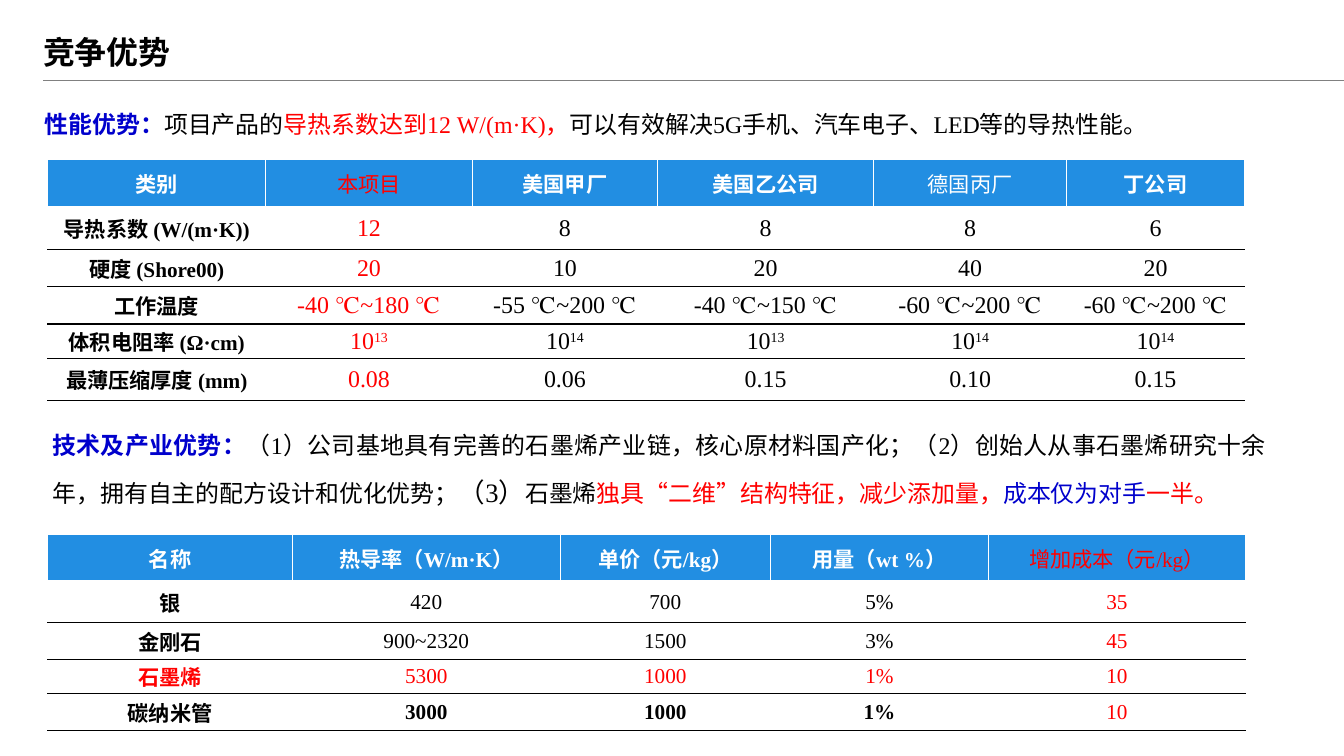
from lxml import etree
from pptx import Presentation
from pptx.dml.color import RGBColor
from pptx.enum.lang import MSO_LANGUAGE_ID
from pptx.enum.shapes import MSO_CONNECTOR
from pptx.enum.text import MSO_ANCHOR, MSO_AUTO_SIZE, PP_ALIGN
from pptx.oxml.ns import qn
from pptx.util import Pt

BLACK = RGBColor(0x00, 0x00, 0x00)
WHITE = RGBColor(0xFF, 0xFF, 0xFF)
RED = RGBColor(0xFF, 0x00, 0x00)
NAVY = RGBColor(0x00, 0x00, 0xCC)
BLUE = RGBColor(0x22, 0x8E, 0xE2)
GRAY = RGBColor(0x80, 0x80, 0x80)

CENTER, LEFT, JUSTIFY = PP_ALIGN.CENTER, PP_ALIGN.LEFT, PP_ALIGN.JUSTIFY
MIDDLE, TOP = MSO_ANCHOR.MIDDLE, MSO_ANCHOR.TOP
NO_FIT = MSO_AUTO_SIZE.NONE
STRAIGHT = MSO_CONNECTOR.STRAIGHT
CHINESE = MSO_LANGUAGE_ID.SIMPLIFIED_CHINESE

SERIF = "Times New Roman"
SANS = "Noto Sans CJK SC"
TITLE_ONLY = 5


def add_text(p, text, size=18, color=BLACK, bold=False, font=SERIF, raised=False):
    r = p.add_run()
    r.text = text
    f = r.font
    f.size, f.bold, f.name = Pt(size), bold, font
    f.color.rgb = color
    f.language_id = CHINESE
    rPr = r._r.get_or_add_rPr()
    etree.SubElement(rPr, qn("a:ea")).set("typeface", SANS)
    if raised:
        rPr.set("baseline", "30000")


class Deck:
    def __init__(self, width, height):
        self.prs = Presentation()
        self.prs.slide_width, self.prs.slide_height = Pt(width), Pt(height)
        self.s = self.prs.slides.add_slide(self.prs.slide_layouts[TITLE_ONLY])

    def title(self, text, x, y, w, h):
        sp = self.s.shapes.title
        sp.left, sp.top, sp.width, sp.height = Pt(x), Pt(y), Pt(w), Pt(h)
        tf = sp.text_frame
        tf.auto_size, tf.word_wrap, tf.vertical_anchor = NO_FIT, False, TOP
        p = tf.paragraphs[0]
        p.alignment = LEFT
        add_text(p, text, size=24, bold=True, font=SANS)

    def paragraph(self, runs, x, y, w, h, spacing):
        tf = self.s.shapes.add_textbox(Pt(x), Pt(y), Pt(w), Pt(h)).text_frame
        tf.word_wrap = True
        p = tf.paragraphs[0]
        p.alignment, p.line_spacing = JUSTIFY, spacing
        for text, fmt in runs:
            add_text(p, text, **fmt)

    def rule(self, x1, x2, y):
        ln = self.s.shapes.add_connector(STRAIGHT, Pt(x1), Pt(y), Pt(x2), Pt(y))
        ln.line.color.rgb, ln.line.width = GRAY, Pt(0.5)
        etree.SubElement(ln._element.spPr, qn("a:effectLst"))

    def borders(self, cell, row):
        top = WHITE if row < 2 else BLACK
        bottom = (WHITE, 3) if row == 0 else (BLACK, 1)
        edges = [("L", WHITE, 1), ("R", WHITE, 1), ("T", top, 1), ("B", *bottom)]
        tcPr = cell._tc.get_or_add_tcPr()
        for i, (side, color, width) in enumerate(edges):
            ln = etree.Element(qn(f"a:ln{side}"), w=str(Pt(width)))
            fill = etree.SubElement(ln, qn("a:solidFill"))
            etree.SubElement(fill, qn("a:srgbClr")).set("val", str(color))
            tcPr.insert(i, ln)

    def table(self, rows, x, y, widths, heights, style):
        frame = self.s.shapes.add_table(
            len(rows), len(widths), Pt(x), Pt(y), Pt(sum(widths)), Pt(sum(heights)))
        tbl = frame.table
        tbl.first_row = tbl.horz_banding = False
        for col, w in zip(tbl.columns, widths):
            col.width = Pt(w)
        for row, h in zip(tbl.rows, heights):
            row.height = Pt(h)
        for i, row in enumerate(rows):
            for j, text in enumerate(row):
                cell = tbl.cell(i, j)
                cell.margin_left = cell.margin_right = Pt(5)
                cell.margin_top = cell.margin_bottom = Pt(0)
                cell.vertical_anchor = MIDDLE
                if i == 0:
                    cell.fill.solid()
                    cell.fill.fore_color.rgb = BLUE
                else:
                    cell.fill.background()
                self.borders(cell, i)
                p = cell.text_frame.paragraphs[0]
                p.alignment = CENTER
                base, _, power = text.partition("^")
                fmt = style(i, j)
                add_text(p, base, **fmt)
                if power:
                    add_text(p, power, raised=True, **fmt)


def performance_style(i, j):
    plain = WHITE if i == 0 else BLACK
    return dict(size=16 if i == 0 or j == 0 else 18,
                color=RED if j == 1 else plain,
                bold=j == 0 or (i == 0 and j not in (1, 4)))


def cost_style(i, j):
    plain = WHITE if i == 0 else BLACK
    return dict(size=16,
                color=RED if j == 4 or i == 3 else plain,
                bold=j == 0 or (i in (0, 4) and j != 4))


PERFORMANCE = [
    ["类别", "本项目", "美国甲厂", "美国乙公司", "德国丙厂", "丁公司"],
    ["导热系数 (W/(m·K))", "12", "8", "8", "8", "6"],
    ["硬度 (Shore00)", "20", "10", "20", "40", "20"],
    ["工作温度", "-40 ℃~180 ℃", "-55 ℃~200 ℃", "-40 ℃~150 ℃",
     "-60 ℃~200 ℃", "-60 ℃~200 ℃"],
    ["体积电阻率 (Ω·cm)", "10^13", "10^14", "10^13", "10^14", "10^14"],
    ["最薄压缩厚度 (mm)", "0.08", "0.06", "0.15", "0.10", "0.15"],
]
COST = [
    ["名称", "热导率（W/m·K）", "单价（元/kg）", "用量（wt %）", "增加成本（元/kg）"],
    ["银", "420", "700", "5%", "35"],
    ["金刚石", "900~2320", "1500", "3%", "45"],
    ["石墨烯", "5300", "1000", "1%", "10"],
    ["碳纳米管", "3000", "1000", "1%", "10"],
]
PERFORMANCE_TEXT = [
    ("性能优势：", dict(color=NAVY, bold=True)),
    ("项目产品的", {}),
    ("导热系数达到12 W/(m·K)，", dict(color=RED)),
    ("可以有效解决5G手机、汽车电子、LED等的导热性能。", {}),
]
INDUSTRY_TEXT = [
    ("技术及产业优势：", dict(color=NAVY, bold=True)),
    ("（1）公司基地具有完善的石墨烯产业链，核心原材料国产化；"
     "（2）创始人从事石墨烯研究十余年，拥有自主的配方设计和优化优势；", {}),
    ("（3）", dict(size=20)),
    ("石墨烯", {}),
    ("独具“二维”结构特征，减少添加量，", dict(color=RED)),
    ("成本仅为对手", dict(color=NAVY)),
    ("一半。", dict(color=RED)),
]


def main():
    deck = Deck(1012.3, 569.5)
    deck.title("竞争优势", 25.2, 20.9, 112.3, 36)
    deck.rule(32.4, 1012.3, 60.5)
    deck.paragraph(PERFORMANCE_TEXT, 26.6, 74.9, 958.3, 31, 1.2)
    deck.table(PERFORMANCE, 36, 120.2, [164.2, 155.5, 139.7, 162.7, 145.4, 133.9],
               [36, 32, 27.4, 28.6, 25.8, 31.7], performance_style)
    deck.paragraph(INDUSTRY_TEXT, 32.4, 310.3, 928.1, 72, 1.5)
    deck.table(COST, 36, 402.5, [184.3, 201.6, 158.4, 164.2, 193.5],
               [36, 30.4, 28, 25.8, 27.4], cost_style)
    deck.prs.save("out.pptx")


if __name__ == "__main__":
    main()
